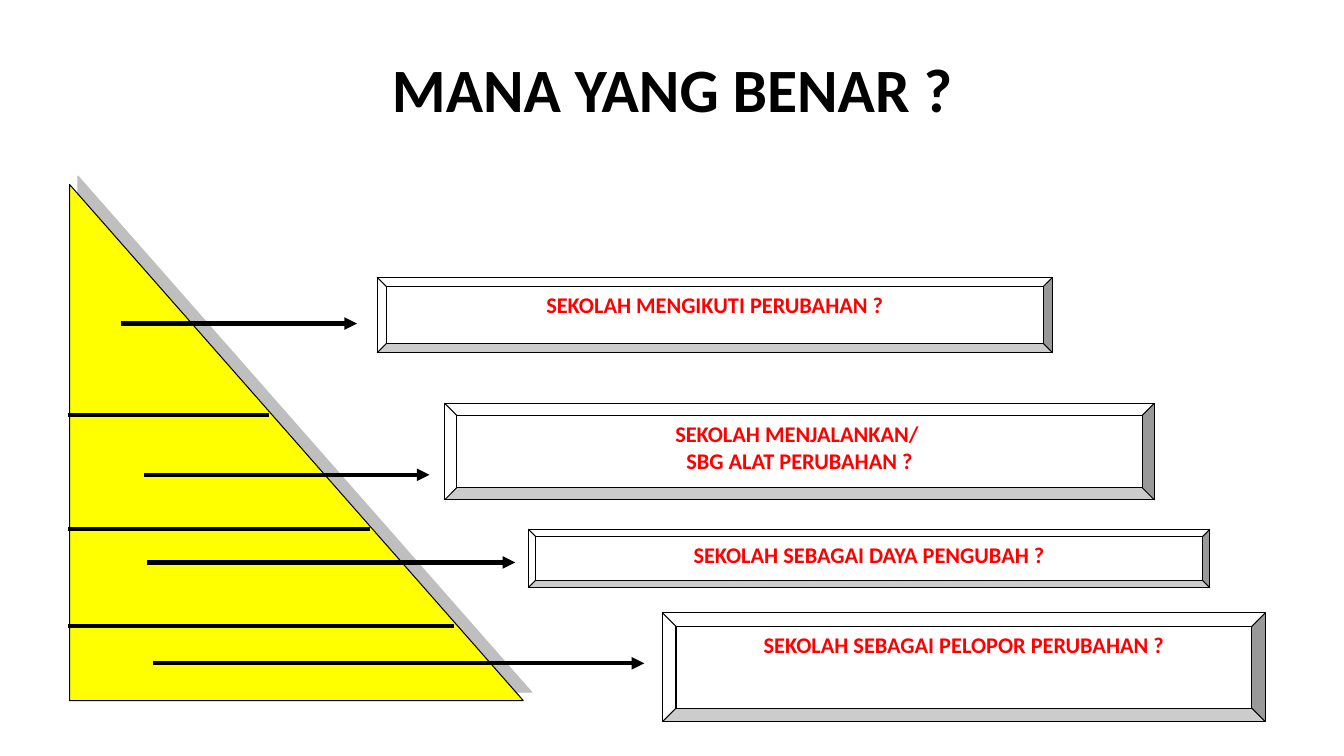
from lxml import etree
from pptx import Presentation, util as u
from pptx.dml.color import RGBColor
from pptx.enum import shapes as s, text as t
from pptx.oxml import parse_xml
from pptx.oxml.ns import qn

NS = 'xmlns:a="http://schemas.openxmlformats.org/drawingml/2006/main"'
W, H = 13.33, 7.5
TITLE = "MANA YANG BENAR ?"
HEAD = (0.67, 0.42, 12, 1)
PEAK = (0.69, 1.83, 4.5, 5.12)
EDGE = 0.67
CUTS = [(2.67, 4.12), (3.67, 5.25), (4.5, 6.21)]
STEPS = [
    ("SEKOLAH MENGIKUTI PERUBAHAN ?", (3.74, 2.75, 6.7, 0.75), (1.2, 3.54, 3.21)),
    ("SEKOLAH MENJALANKAN/ \nSBG ALAT PERUBAHAN ?", (4.41, 4, 7.04, 0.96), (1.43, 4.26, 4.71)),
    ("SEKOLAH SEBAGAI DAYA PENGUBAH ?", (5.24, 5.25, 6.76, 0.58), (1.46, 5.11, 5.58)),
    ("SEKOLAH SEBAGAI PELOPOR PERUBAHAN ?", (6.57, 6.08, 5.98, 1.08), (1.52, 6.39, 6.58)),
]
SHADE = (f'<a:effectLst {NS}><a:outerShdw dist="107950" dir="18900000" algn="ctr" rotWithShape="0">'
         '<a:srgbClr val="808080"><a:alpha val="50000"/></a:srgbClr></a:outerShdw></a:effectLst>')


def color(code):
    return RGBColor.from_string(code)


def write(frame, words, size, code, **form):
    frame.word_wrap = True
    frame.text = words
    for para in frame.paragraphs:
        para.alignment = t.PP_ALIGN.CENTER
        for key, val in form.items():
            setattr(para, key, val)
        for run in para.runs:
            for key, val in dict(name="Calibri", size=u.Pt(size), bold=True).items():
                setattr(run.font, key, val)
            run.font.color.rgb = color(code)


def block(kind, area, fill):
    shape = slide.shapes.add_shape(kind, *map(u.Inches, area))
    shape.shadow.inherit = False
    shape.fill.solid()
    shape.fill.fore_color.rgb = color(fill)
    shape.line.color.rgb = color("000000")
    shape.line.width = u.Pt(0.75)
    return shape


def rule(left, right, y, arrow=False):
    line = slide.shapes.add_connector(s.MSO_CONNECTOR.STRAIGHT, *map(u.Inches, (left, y, right, y)))
    line.line.color.rgb = color("000000")
    line.line.width = u.Pt(3)
    if arrow:
        etree.SubElement(line.line._get_or_add_ln(), qn("a:tailEnd"), type="triangle")
    line._element.spPr.append(parse_xml(f"<a:effectLst {NS}/>"))


deck = Presentation()
deck.slide_width, deck.slide_height = u.Inches(W), u.Inches(H)
slide = deck.slides.add_slide(deck.slide_layouts[5])

title = slide.shapes.title
for key, val in zip(("left", "top", "width", "height"), HEAD):
    setattr(title, key, u.Inches(val))
title.text_frame.vertical_anchor = t.MSO_ANCHOR.MIDDLE
write(title.text_frame, TITLE, 44, "000000", line_spacing=0.9)

peak = block(s.MSO_SHAPE.RIGHT_TRIANGLE, PEAK, "FFFF00")
props = peak._element.spPr
props.replace(props.find(qn("a:effectLst")), parse_xml(SHADE))

for right, y in CUTS:
    rule(EDGE, right, y)
for words, area, (left, right, y) in STEPS:
    rule(left, right, y, True)
for words, area, span in STEPS:
    box = block(s.MSO_SHAPE.BEVEL, area, "FFFFFF")
    box.text_frame.vertical_anchor = t.MSO_ANCHOR.TOP
    write(box.text_frame, words, 16, "FF0000")

deck.save("out.pptx")
